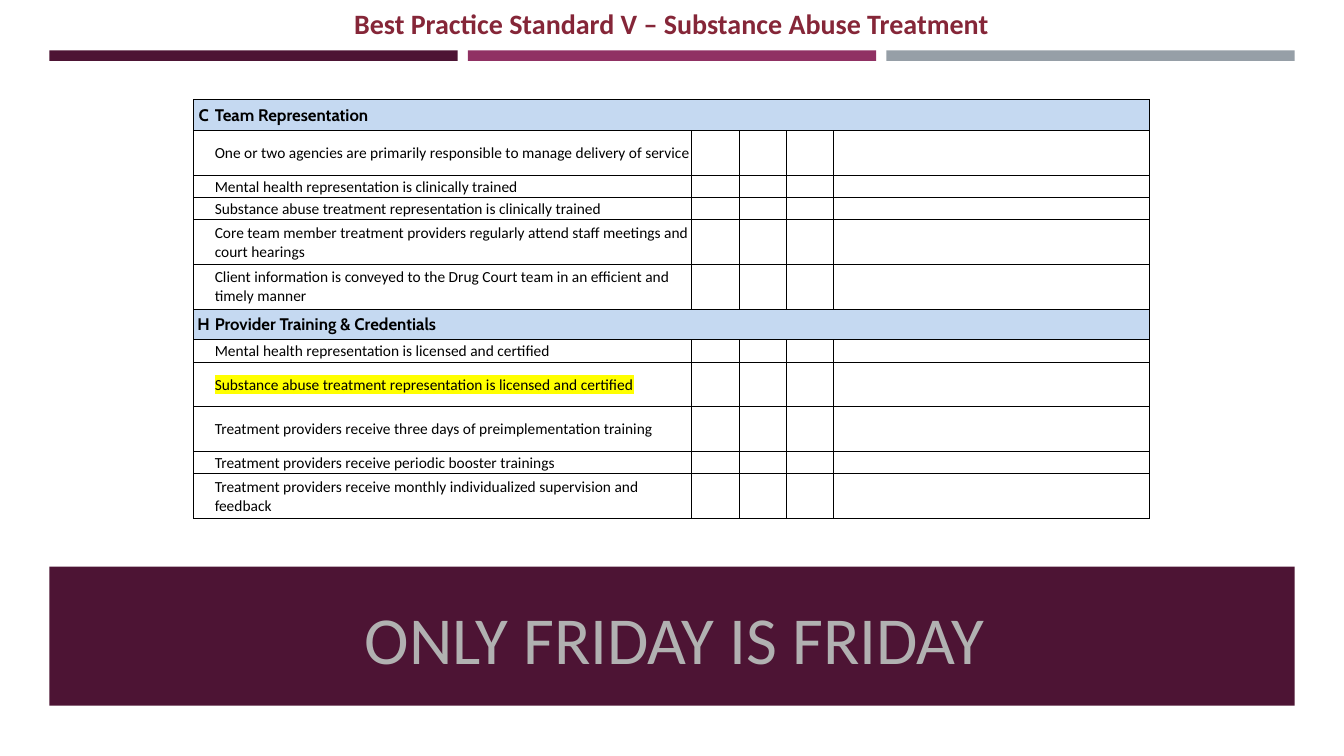
"""Build the treatment standard checklist slide."""
import pptx
import pptx.util
import pptx.dml.color
import pptx.enum.shapes
import pptx.enum.text
import pptx.oxml
import pptx.oxml.ns

RGBColor = pptx.dml.color.RGBColor
PLUM = RGBColor(0x4D, 0x14, 0x34)
MAGENTA = RGBColor(0x90, 0x31, 0x63)
SLATE = RGBColor(0x96, 0x9F, 0xA7)
SILVER = RGBColor(0xB1, 0xB1, 0xB1)
MAROON = RGBColor(0x85, 0x26, 0x38)
PALE_BLUE = RGBColor(0xC5, 0xD9, 0xF1)
BLACK = RGBColor(0, 0, 0)
YELLOW = RGBColor(0xFF, 0xFF, 0)

ALIGN = pptx.enum.text.PP_ALIGN
MIDDLE = pptx.enum.text.MSO_ANCHOR.MIDDLE
TOP = pptx.enum.text.MSO_ANCHOR.TOP
NS = pptx.oxml.ns.nsdecls("a")

HEADER, SINGLE, DOUBLE = 3.05, 2.2, 4.44
COLUMNS = [2, 47.4, 4.7, 4.7, 4.7, 31.3]
HIGHLIGHTED = "Substance abuse treatment representation is licensed and certified"
ROWS = [
    (HEADER, "C", "Team Representation"),
    (DOUBLE, "", "One or two agencies are primarily responsible to manage delivery of service"),
    (SINGLE, "", "Mental health representation is clinically trained"),
    (SINGLE, "", "Substance abuse treatment representation is clinically trained"),
    (DOUBLE, "", "Core team member treatment providers regularly attend staff meetings and court hearings"),
    (DOUBLE, "", "Client information is conveyed to the Drug Court team in an efficient and timely manner"),
    (HEADER, "H", "Provider Training & Credentials"),
    (SINGLE, "", "Mental health representation is licensed and certified"),
    (DOUBLE, "", HIGHLIGHTED),
    (DOUBLE, "", "Treatment providers receive three days of preimplementation training"),
    (SINGLE, "", "Treatment providers receive periodic booster trainings"),
    (DOUBLE, "", "Treatment providers receive monthly individualized supervision and feedback"),
]


class Deck:
    """Draw styled elements on a slide gridded in tenths of an inch."""

    unit = pptx.util.Inches(0.1)
    font = "Calibri"
    heading_font = "Cabin"

    def __init__(self):
        self.prs = pptx.Presentation()
        self.prs.slide_width = pptx.util.Inches(13.33)
        self.prs.slide_height = pptx.util.Inches(7.5)
        self.slide = self.prs.slides.add_slide(self.prs.slide_layouts[6])

    def grid(self, *cells):
        return [round(n * self.unit) for n in cells]

    def paragraph(self, p, text, size, color, bold=False, font=None, align=ALIGN.LEFT):
        p.alignment = align
        p.font.size = pptx.util.Pt(size)
        p.font.name = font or self.font
        p.font.bold = bold
        p.font.color.rgb = color
        if text:
            r = p.add_run()
            r.text = text
            return r
        p._p.append(pptx.oxml.parse_xml(f'<a:endParaRPr {NS} sz="{size * 100}"/>'))

    def bar(self, x, y, w, h, color):
        sp = self.slide.shapes.add_shape(
            pptx.enum.shapes.MSO_SHAPE.RECTANGLE, *self.grid(x, y, w, h))
        sp.shadow.inherit = False
        sp.fill.solid()
        sp.fill.fore_color.rgb = color
        sp.line.fill.background()

    def text(self, x, y, w, h, text, size, color, bold=False, anchor=TOP):
        tf = self.slide.shapes.add_textbox(*self.grid(x, y, w, h)).text_frame
        tf.word_wrap = True
        tf.vertical_anchor = anchor
        self.paragraph(tf.paragraphs[0], text, size, color, bold, align=ALIGN.CENTER)

    def borders(self, cell, col):
        tcPr = cell._tc.get_or_add_tcPr()
        for side in "LRTB":
            hidden = (side, col) in (("R", 0), ("L", 1))
            paint = "<a:noFill/>" if hidden else (
                f'<a:solidFill><a:srgbClr val="{BLACK}"/></a:solidFill>')
            tcPr.append(pptx.oxml.parse_xml(
                f'<a:ln{side} {NS} w="6350">{paint}</a:ln{side}>'))

    def highlight(self, r):
        r._r.get_or_add_rPr().append(pptx.oxml.parse_xml(
            f'<a:highlight {NS}><a:srgbClr val="{YELLOW}"/></a:highlight>'))

    def cell(self, cell, col, text, header):
        self.borders(cell, col)
        cell.margin_left = cell.margin_right = cell.margin_top = pptx.util.Inches(0.01)
        cell.margin_bottom = 0
        cell.vertical_anchor = MIDDLE
        if header:
            cell.fill.solid()
            cell.fill.fore_color.rgb = PALE_BLUE
        else:
            cell.fill.background()
        r = self.paragraph(cell.text_frame.paragraphs[0], text, 12 if header else 11,
                           BLACK, header, self.heading_font if header else self.font,
                           ALIGN.LEFT if col else ALIGN.CENTER)
        if text == HIGHLIGHTED:
            self.highlight(r)

    def checklist(self, x, y, columns, rows):
        heights = [row[0] for row in rows]
        table = self.slide.shapes.add_table(
            len(rows), len(columns),
            *self.grid(x, y, sum(columns), sum(heights))).table
        table.first_row = table.horz_banding = False
        for column, width in zip(table.columns, self.grid(*columns)):
            column.width = width
        for i, (height, letter, label) in enumerate(rows):
            table.rows[i].height = self.grid(height)[0]
            texts = [letter, label] + [""] * (len(columns) - 2)
            for j, text in enumerate(texts):
                self.cell(table.cell(i, j), j, text, bool(letter))
            if letter:
                table.cell(i, 1).merge(table.cell(i, len(columns) - 1))


def main():
    deck = Deck()
    for i, color in enumerate([PLUM, MAGENTA, SLATE]):
        deck.bar(4.9 + 41.5 * i, 5, 40.5, 1.05, color)
    deck.bar(4.9, 56.2, 123.5, 13.8, PLUM)
    deck.text(6.6, 55.1, 120.6, 16.4, "ONLY FRIDAY IS FRIDAY", 48, SILVER, anchor=MIDDLE)
    deck.text(5.1, 0.2, 123, 4.4, "Best Practice Standard V – Substance Abuse Treatment",
              20, MAROON, bold=True)
    deck.checklist(19.2, 9.9, COLUMNS, ROWS)
    deck.prs.save("out.pptx")


if __name__ == "__main__":
    main()
